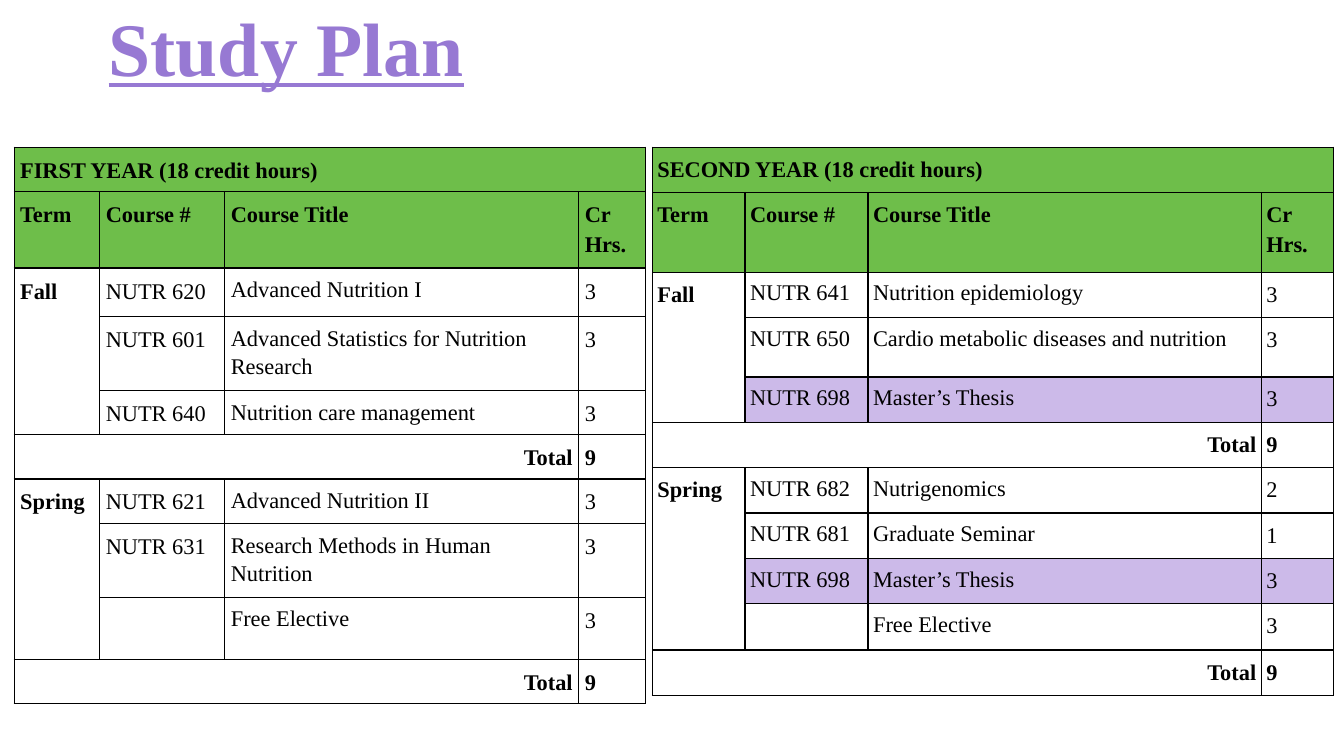
from dataclasses import dataclass

from lxml import etree
from pptx import Presentation, util as u
from pptx.dml.color import RGBColor
from pptx.enum import text
from pptx.oxml import ns


@dataclass(frozen=True)
class Theme:
    font: str = "Times New Roman"
    title_size: int = 54
    body_size: int = 16
    title: str = "9779D3"
    ink: str = "000000"
    header: str = "6EBE4A"
    thesis: str = "CCBAE9"


@dataclass
class YearPlan:
    heading: str
    left: float
    margin: float
    code_spacing: float
    columns: list
    rows: list
    terms: list


COLUMN_NAMES = ["Term", "Course #", "Course Title", "Cr Hrs."]
THESIS = ("NUTR 698", "Master’s Thesis", 3)
ELECTIVE = ("", "Free Elective", 3)

YEARS = [
    YearPlan(
        "FIRST YEAR (18 credit hours)", 0.14, 0.06, 1.2,
        [0.85, 1.24, 3.51, 0.66],
        [0.43, 0.75, 0.48, 0.7, 0.43, 0.43, 0.43, 0.7, 0.62, 0.43],
        [("Fall", [("NUTR 620", "Advanced Nutrition I", 3),
                   ("NUTR 601", "Advanced Statistics for Nutrition Research", 3),
                   ("NUTR 640", "Nutrition care management", 3)]),
         ("Spring", [("NUTR 621", "Advanced Nutrition II", 3),
                     ("NUTR 631", "Research Methods in Human Nutrition", 3),
                     ELECTIVE])]),
    YearPlan(
        "SECOND YEAR (18 credit hours)", 6.47, 0.05, 1.15,
        [0.92, 1.22, 3.9, 0.72],
        [0.45, 0.79, 0.45, 0.59, 0.45, 0.45, 0.45, 0.45, 0.45, 0.46, 0.45],
        [("Fall", [("NUTR 641", "Nutrition epidemiology", 3),
                   ("NUTR 650", "Cardio metabolic diseases and nutrition", 3),
                   THESIS]),
         ("Spring", [("NUTR 682", "Nutrigenomics", 2),
                     ("NUTR 681", "Graduate Seminar", 1),
                     THESIS,
                     ELECTIVE])]),
]


def apply(target, values):
    for name, value in values.items():
        setattr(target, name, value)


class StudyPlanSlide:
    def __init__(self, page, theme):
        self.page = page
        self.theme = theme

    def add_words(self, para, words, size, color, font=None, layout=None):
        apply(para, layout or {})
        span = para.add_run()
        span.text = words
        apply(span.font, {"name": self.theme.font, "size": u.Pt(size), **(font or {})})
        span.font.color.rgb = RGBColor.from_string(color)

    def title(self, words):
        box = self.page.shapes.add_textbox(
            u.Inches(0.98), u.Inches(-0.21), u.Inches(11.5), u.Inches(1.45))
        apply(box.text_frame, {"word_wrap": True,
                               "vertical_anchor": text.MSO_ANCHOR.MIDDLE})
        self.add_words(box.text_frame.paragraphs[0], words, self.theme.title_size,
                       self.theme.title, {"bold": True, "underline": True},
                       {"line_spacing": 0.9})

    def frame_cell(self, cell, margin):
        """Give a cell its margins, black borders and no fill."""
        sides = ("left", "right", "top", "bottom")
        apply(cell, {f"margin_{side}": u.Inches(margin) for side in sides})
        properties = cell._tc.get_or_add_tcPr()
        for side in "LRTB":
            line = etree.SubElement(properties, ns.qn(f"a:ln{side}"), w=str(u.Pt(1)))
            fill = etree.SubElement(line, ns.qn("a:solidFill"))
            etree.SubElement(fill, ns.qn("a:srgbClr"), val=self.theme.ink)
        cell.fill.background()

    def fill_cell(self, cell, words, fill=None, bold=False, **layout):
        if words:
            self.add_words(cell.text_frame.paragraphs[0], words, self.theme.body_size,
                           self.theme.ink, {"bold": bold},
                           {"line_spacing": 1.2, **layout})
        if fill:
            cell.fill.solid()
            cell.fill.fore_color.rgb = RGBColor.from_string(fill)

    def year_table(self, plan):
        table = self.page.shapes.add_table(
            len(plan.rows), len(plan.columns), u.Inches(plan.left), u.Inches(1.46),
            u.Inches(sum(plan.columns)), u.Inches(sum(plan.rows))).table
        apply(table, {"first_row": False, "horz_banding": False})
        for column, width in zip(table.columns, plan.columns):
            column.width = u.Inches(width)
        for row, height in zip(table.rows, plan.rows):
            row.height = u.Inches(height)
        for cell in table.iter_cells():
            self.frame_cell(cell, plan.margin)

        table.cell(0, 0).merge(table.cell(0, 3))
        self.fill_cell(table.cell(0, 0), plan.heading, self.theme.header, bold=True)
        for col, name in enumerate(COLUMN_NAMES):
            self.fill_cell(table.cell(1, col), name, self.theme.header, bold=True)
        top = 2
        for term, courses in plan.terms:
            self.term_rows(table, top, term, courses, plan.code_spacing)
            top += len(courses) + 1

    def term_rows(self, table, top, term, courses, code_spacing):
        """Fill the rows of one term, then its total row."""
        total_row = top + len(courses)
        table.cell(top, 0).merge(table.cell(total_row - 1, 0))
        self.fill_cell(table.cell(top, 0), term, bold=True)
        for row, course in enumerate(courses, top):
            code, name, hours = course
            fill = self.theme.thesis if course == THESIS else None
            self.fill_cell(table.cell(row, 1), code, fill, line_spacing=code_spacing)
            self.fill_cell(table.cell(row, 2), name, fill, line_spacing=1.15,
                           space_after=u.Pt(10))
            self.fill_cell(table.cell(row, 3), str(hours), fill)
        table.cell(total_row, 0).merge(table.cell(total_row, 2))
        self.fill_cell(table.cell(total_row, 0), "Total", bold=True,
                       alignment=text.PP_ALIGN.RIGHT)
        total = sum(hours for _, _, hours in courses)
        self.fill_cell(table.cell(total_row, 3), str(total), bold=True)


def main():
    deck = Presentation()
    apply(deck, {"slide_width": u.Inches(13.33), "slide_height": u.Inches(7.5)})
    slide = StudyPlanSlide(deck.slides.add_slide(deck.slide_layouts[6]), Theme())
    slide.title("Study Plan")
    for plan in YEARS:
        slide.year_table(plan)
    deck.save("out.pptx")


if __name__ == "__main__":
    main()
